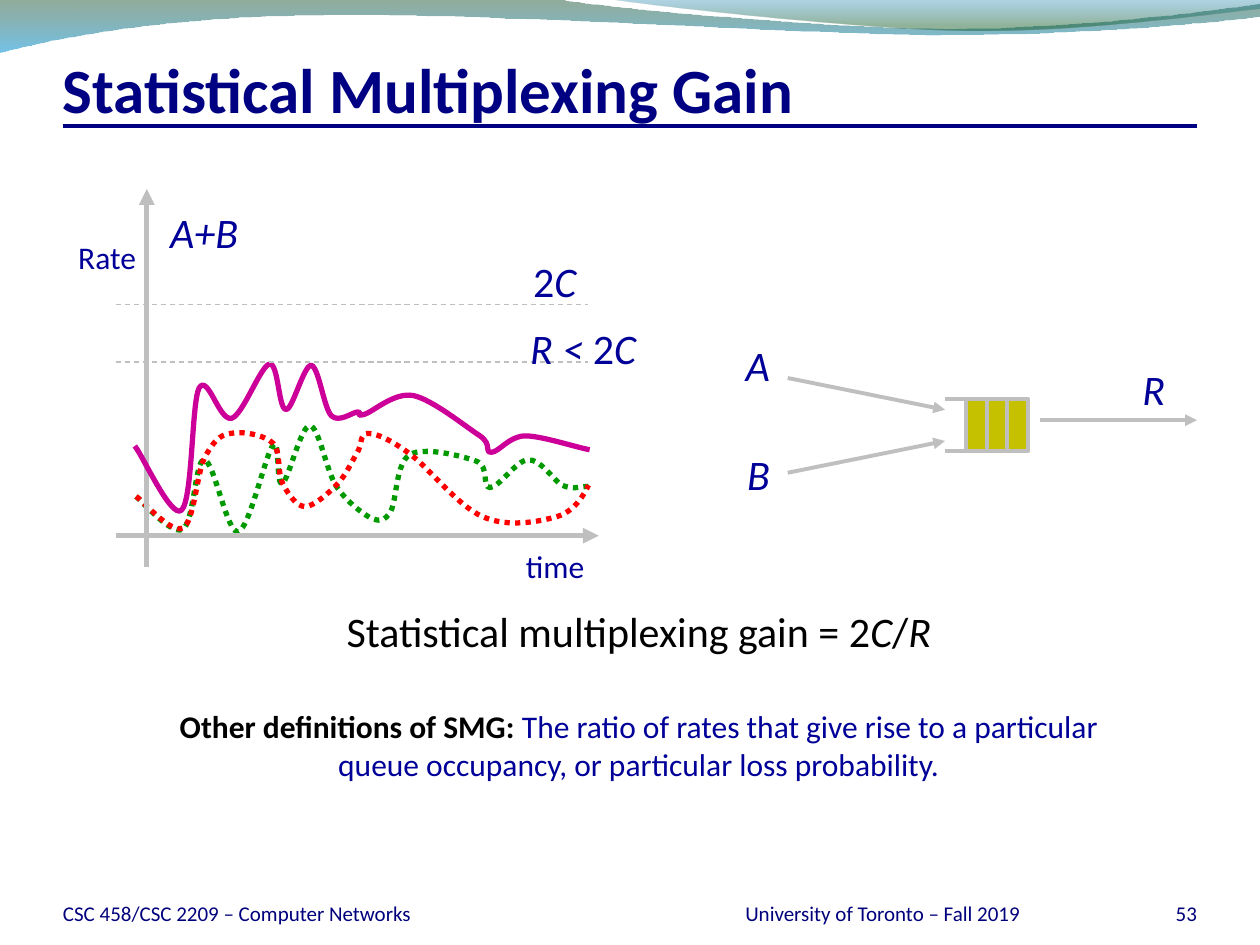
from dataclasses import dataclass, field

from lxml import etree
from pptx import Presentation
from pptx import util as u
from pptx.dml.color import RGBColor
from pptx.enum import dml, shapes, text
from pptx.oxml.ns import qn

NAVY, BLUE, GREY, BLACK = "000082", "000099", "BFBFBF", "000000"
FOOT = "00007C"
LEFT, CENTER, RIGHT = text.PP_ALIGN.LEFT, text.PP_ALIGN.CENTER, text.PP_ALIGN.RIGHT
TOP, BOTTOM = text.MSO_ANCHOR.TOP, text.MSO_ANCHOR.BOTTOM
FIT, FIXED = text.MSO_AUTO_SIZE.SHAPE_TO_FIT_TEXT, text.MSO_AUTO_SIZE.NONE
DOT, DASH = dml.MSO_LINE.ROUND_DOT, dml.MSO_LINE.DASH
UNIT = u.Cm(2.54) / 100


@dataclass
class Run:
    words: str
    size: float = 24
    color: str = BLUE
    fmt: dict = field(default_factory=dict)


@dataclass
class Label:
    x: float
    y: float
    w: float
    h: float
    paras: list[list[Run]]
    align: int = LEFT
    anchor: int = TOP
    wrap: bool = False
    inset: bool = True
    gap: float = 0


@dataclass
class Line:
    x1: float
    y1: float
    x2: float
    y2: float
    width: float = 2.25
    color: str = GREY
    arrow: bool = False
    dash: int | None = None


@dataclass
class Curve:
    color: str
    points: list[tuple[int, int]]
    dash: int | None = None


@dataclass
class Wave:
    stops: list[tuple[float, str, int]]
    points: list[tuple[int, int]]


def rgb(value: str) -> RGBColor:
    return RGBColor.from_string(value)


def draw_label(s, label: Label) -> None:
    box = s.shapes.add_textbox(*map(u.Cm, (label.x, label.y, label.w, label.h)))
    tf = box.text_frame
    fmt = {"word_wrap": label.wrap, "vertical_anchor": label.anchor,
           "auto_size": FIXED if label.wrap else FIT}
    if not label.inset:
        fmt |= {f"margin_{side}": 0 for side in ("left", "top", "right", "bottom")}
    for key, value in fmt.items():
        setattr(tf, key, value)
    for i, runs in enumerate(label.paras):
        p = tf.add_paragraph() if i else tf.paragraphs[0]
        p.alignment = label.align
        if i:
            p.space_before = u.Pt(label.gap)
        for run in runs:
            r = p.add_run()
            r.text = run.words
            for key, value in {"name": "Calibri", "size": u.Pt(run.size), **run.fmt}.items():
                setattr(r.font, key, value)
            r.font.color.rgb = rgb(run.color)


def style_line(ln, color: str, width: float, dash: int | None = None) -> None:
    ln.color.rgb = rgb(color)
    ln.width = u.Pt(width)
    if dash is not None:
        ln.dash_style = dash


def draw_line(s, line: Line) -> None:
    ends = map(u.Cm, (line.x1, line.y1, line.x2, line.y2))
    sp = s.shapes.add_connector(shapes.MSO_CONNECTOR.STRAIGHT, *ends)
    style_line(sp.line, line.color, line.width, line.dash)
    props = sp._element.spPr
    if line.arrow:
        etree.SubElement(props.find(qn("a:ln")), qn("a:tailEnd"), type="triangle")
    etree.SubElement(props, qn("a:effectLst"))


def add_bezier(s, points: list[tuple[int, int]], close: bool = False):
    builder = s.shapes.build_freeform(*points[0], scale=UNIT)
    builder.add_line_segments(points[1:], close=close)
    sp = builder.convert_to_shape()
    sp.shadow.inherit = False
    segments = list(sp._element.iter(qn("a:lnTo")))
    for i in range(0, len(segments), 3):
        cubic = etree.Element(qn("a:cubicBezTo"))
        segments[i].addprevious(cubic)
        for segment in segments[i:i + 3]:
            cubic.append(segment[0])
            segment.getparent().remove(segment)
    return sp


def draw_curve(s, curve: Curve) -> None:
    sp = add_bezier(s, curve.points)
    sp.fill.background()
    style_line(sp.line, curve.color, 3, curve.dash)


def draw_wave(s, wave: Wave) -> None:
    sp = add_bezier(s, wave.points, close=True)
    sp.line.fill.background()
    sp.fill.gradient()
    sp.fill.gradient_angle = 270
    for stop, (position, color, _) in zip(sp.fill.gradient_stops, wave.stops):
        stop.position = position
        stop.color.rgb = rgb(color)
    colors = sp._element.spPr.find(qn("a:gradFill")).iter(qn("a:srgbClr"))
    for element, (_, _, opacity) in zip(colors, wave.stops):
        etree.SubElement(element, qn("a:alpha"), val=str(opacity * 1000))


def draw_bar(s, x: float, y: float, w: float, h: float) -> None:
    sp = s.shapes.add_shape(shapes.MSO_SHAPE.RECTANGLE, *map(u.Cm, (x, y, w, h)))
    sp.shadow.inherit = False
    sp.fill.solid()
    sp.fill.fore_color.rgb = rgb("C5C000")
    style_line(sp.line, GREY, 2.25)


IT, BOLD = {"italic": True}, {"bold": True}

WAVES = [
    Wave([(0, "0F461E", 45), (1, "0090D6", 55)],
         [(0, -1), (0, -1), (440, -1), (440, -1), (476, 6), (664, 23), (758, 23),
          (853, 23), (958, 9), (1000, 3), (1000, 3), (1001, 13), (1001, 13),
          (983, 16), (870, 28), (746, 28), (622, 27), (382, 10), (257, 12),
          (129, 13), (46, 30), (-1, 42)]),
    Wave([(0, "0076AF", 30), (0.8, "0D5821", 45)],
         [(479, -1), (509, 4), (682, 23), (769, 24), (856, 25), (961, 11), (1000, 7),
          (1000, 7), (1000, -1), (1000, -1)]),
]
RATE_A = Curve("009900", [
    (108, 394), (114, 399), (136, 425), (145, 420), (154, 415), (155, 364), (162, 365),
    (170, 365), (180, 424), (189, 422), (198, 420), (211, 359), (217, 353),
    (222, 346), (219, 386), (224, 384), (229, 381), (239, 337), (246, 338),
    (253, 338), (259, 374), (267, 386), (275, 398), (287, 407), (294, 411),
    (301, 414), (305, 414), (310, 406), (315, 397), (314, 368), (325, 361),
    (336, 354), (367, 362), (378, 366), (389, 370), (382, 387), (389, 387),
    (396, 387), (410, 365), (419, 365), (429, 364), (439, 381), (446, 385),
    (454, 389), (462, 386), (467, 386)], DOT)
RATE_B = Curve("FF0000", [
    (108, 394), (114, 398), (136, 424), (145, 419), (154, 415), (156, 377), (162, 364),
    (169, 351), (174, 345), (183, 344), (192, 342), (210, 345), (217, 352),
    (223, 359), (220, 374), (224, 383), (228, 391), (235, 402), (242, 402),
    (249, 402), (260, 392), (267, 385), (274, 378), (279, 367), (283, 360),
    (288, 353), (285, 344), (292, 344), (299, 344), (310, 349), (325, 360),
    (340, 371), (364, 402), (383, 410), (403, 419), (428, 414), (442, 410),
    (456, 406), (464, 392), (467, 385)], DOT)
RATE_SUM = Curve("CC0099", [
    (107, 354), (114, 363), (136, 412), (144, 405), (153, 397), (152, 320), (158, 308),
    (165, 296), (174, 335), (184, 332), (193, 329), (207, 290), (214, 289),
    (221, 288), (221, 325), (227, 325), (232, 326), (241, 290), (247, 290),
    (253, 291), (257, 324), (263, 330), (269, 336), (280, 327), (284, 327),
    (288, 327), (281, 331), (289, 329), (296, 327), (313, 311), (328, 314),
    (343, 317), (370, 339), (381, 346), (391, 353), (384, 359), (390, 359),
    (396, 359), (404, 346), (417, 346), (430, 346), (457, 355), (468, 357)])

QUEUE_TOP, QUEUE_H, BAR_X, BAR_W = 8.04, 1.06, 19.47, 0.42
FLOWS = [Line(15.88, 7.62, 19.05, 8.26, arrow=True),
         Line(15.88, 9.53, 19.05, 8.89, arrow=True),
         Line(20.96, 8.47, 24.13, 8.47, arrow=True)]
RAILS = [Line(19.05, y, 19.9, y) for y in (QUEUE_TOP, QUEUE_TOP + QUEUE_H)]
AXES = [Line(2.96, 11.43, 2.96, 3.81, 3, arrow=True),
        Line(2.33, 10.8, 12.07, 10.8, 3, arrow=True)]
LEVELS = [Line(2.33, y, 11.86, y, 0.75, dash=DASH) for y in (7.3, 6.14)]

LABELS = [
    Label(1.27, 0.84, 22.86, 1.7, [[Run("Statistical Multiplexing Gain", 36, NAVY, BOLD)]],
          anchor=BOTTOM, wrap=True, inset=False),
    Label(14.78, 6.71, 0.99, 1.27, [[Run("A", fmt=IT)]]),
    Label(14.81, 8.92, 0.97, 1.27, [[Run("B", fmt=IT)]]),
    Label(22.78, 7.21, 0.97, 1.27, [[Run("R", fmt=IT)]]),
    Label(10.5, 5.03, 1.42, 1.27, [[Run("2"), Run("C", fmt=IT)]]),
    Label(10.44, 6.38, 2.64, 1.27, [[Run("R < ", fmt=IT), Run("2"), Run("C", fmt=IT)]]),
    Label(3.18, 4.04, 1.88, 1.27, [[Run("A+B", fmt=IT)]]),
    Label(10.34, 10.9, 1.7, 1.02, [[Run("time", 18)]], CENTER),
    Label(1.32, 4.67, 1.68, 1.02, [[Run("Rate", 18)]], CENTER),
    Label(2.82, 12.09, 20.12, 3.81, [
        [Run("Statistical multiplexing gain = 2", color=BLACK), Run("C", color=BLACK, fmt=IT),
         Run("/", color=BLACK), Run("R", color=BLACK, fmt=IT)],
        [Run("Other definitions of SMG: ", 18, BLACK, BOLD),
         Run("The ratio of rates that give rise to a particular queue occupancy, "
             "or particular loss probability.", 18)]], CENTER, wrap=True, gap=29),
]
FOOTERS = [(1.27, 12.27, "CSC 458/CSC 2209 – Computer Networks", LEFT),
           (22.02, 2.11, "53", RIGHT),
           (13.77, 8.05, "University of Toronto – Fall 2019", CENTER)]


def main() -> None:
    prs = Presentation()
    prs.slide_width, prs.slide_height = u.Cm(25.4), u.Cm(19.05)
    s = prs.slides.add_slide(prs.slide_layouts[6])
    for wave in WAVES:
        draw_wave(s, wave)
    draw_line(s, Line(1.27, 2.54, 24.13, 2.54, color=NAVY))
    for i in range(3):
        draw_bar(s, BAR_X + i * BAR_W, QUEUE_TOP, BAR_W, QUEUE_H)
    for line in FLOWS + RAILS:
        draw_line(s, line)
    for curve in (RATE_A, RATE_B):
        draw_curve(s, curve)
    for line in AXES:
        draw_line(s, line)
    draw_curve(s, RATE_SUM)
    for line in LEVELS:
        draw_line(s, line)
    for x, w, words, align in FOOTERS:
        draw_label(s, Label(x, 17.65, w, 1.02, [[Run(words, 12, FOOT)]], align, BOTTOM,
                            wrap=True, inset=False))
    for label in LABELS:
        draw_label(s, label)
    prs.save("out.pptx")


if __name__ == "__main__":
    main()
